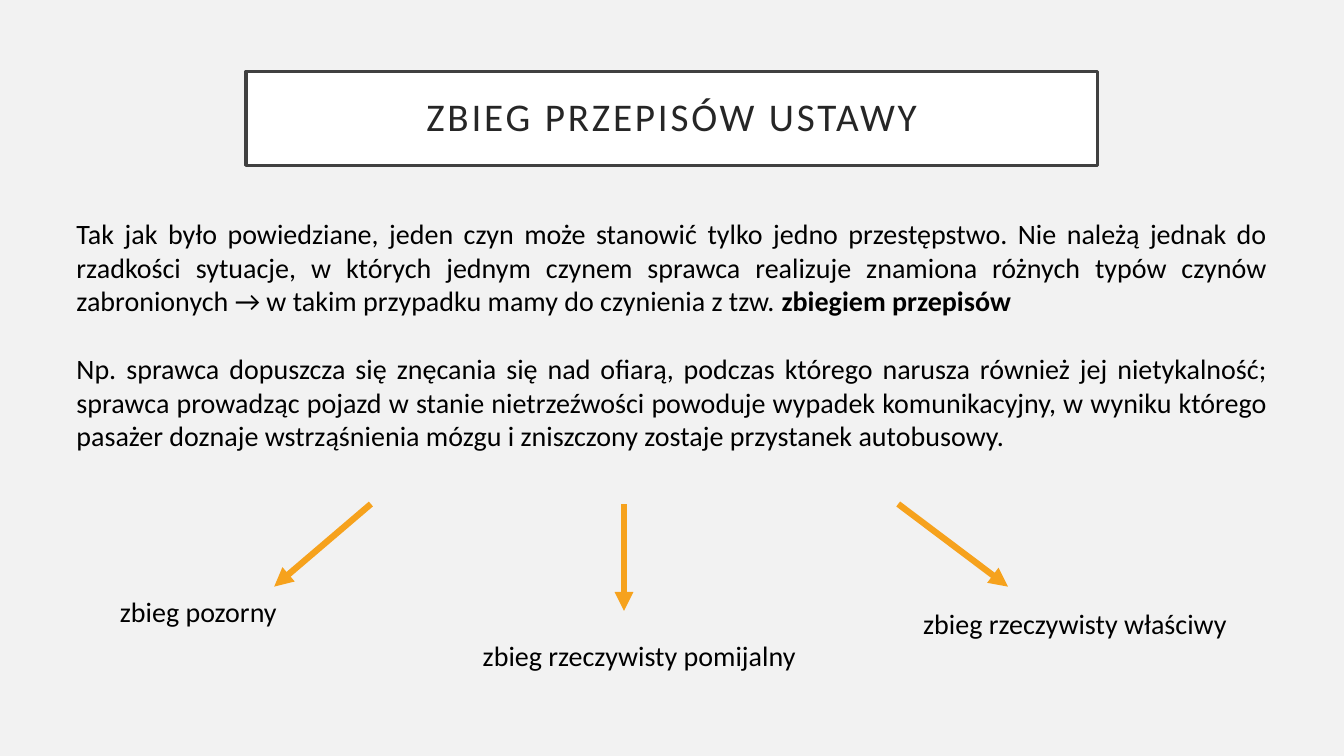
"""Build a slide on concurrent legal provisions and its three kinds."""
import dataclasses

import lxml.etree
import pptx
import pptx.dml.color
import pptx.enum.shapes
import pptx.enum.text
import pptx.oxml.ns
import pptx.util

TITLE = "ZBIEG PRZEPISÓW USTAWY"
BODY = [
    [("Tak jak było powiedziane, jeden czyn może stanowić tylko jedno przestępstwo. "
      "Nie należą jednak do rzadkości sytuacje, w których jednym czynem sprawca realizuje "
      "znamiona różnych typów czynów zabronionych → w takim przypadku mamy do czynienia "
      "z tzw. ", False),
     ("zbiegiem przepisów", True)],
    [("Np. sprawca dopuszcza się znęcania się nad ofiarą, podczas którego narusza również "
      "jej nietykalność; sprawca prowadząc pojazd w stanie nietrzeźwości powoduje wypadek "
      "komunikacyjny, w wyniku którego pasażer doznaje wstrząśnienia mózgu i zniszczony "
      "zostaje przystanek autobusowy.", False)],
]
TITLE_BOX = (18.3, 9.47, 63.38, 12.4)
BODY_BOX = (4.95, 28, 90.08, 32.8)
START, ROW = 66.67, 5.87
KINDS = [
    ("zbieg pozorny", (8.18, 78, 13.43, ROW), 27.6, (20.4, 77.6)),
    ("zbieg rzeczywisty pomijalny", (35.18, 83.87, 24.83, ROW), 46.43, (46.43, 80.8)),
    ("zbieg rzeczywisty właściwy", (67.95, 79.6, 24.3, ROW), 66.83, (75, 77.6)),
]


@dataclasses.dataclass(frozen=True)
class Theme:
    font: str = "Calibri"
    page: str = "F2F2F2"
    panel: str = "FFFFFF"
    frame: str = "404040"
    head: str = "262626"
    ink: str = "000000"
    arrow: str = "F6A21D"
    large: int = 28
    base: int = 20
    gap: float = 24.4


THEME = Theme()
RGB = pptx.dml.color.RGBColor.from_string
Pt = pptx.util.Pt
ALIGN = pptx.enum.text.PP_ALIGN
QN = pptx.oxml.ns.qn

deck = pptx.Presentation()
deck.slide_width = pptx.util.Inches(13.33)
deck.slide_height = pptx.util.Inches(7.5)
slide = deck.slides.add_slide(deck.slide_layouts[6])
slide.background.fill.solid()
slide.background.fill.fore_color.rgb = RGB(THEME.page)


def place(*shares):
    """Turn percentages of the slide into alternating x and y lengths."""
    sides = (deck.slide_width, deck.slide_height) * 2
    return [round(side * share / 100) for side, share in zip(sides, shares)]


def write(par, text, size, color, bold=False):
    """Add one styled run to a paragraph."""
    run = par.add_run()
    run.text = text
    run.font.name, run.font.size, run.font.bold = THEME.font, Pt(size), bold
    run.font.color.rgb = RGB(color)
    return run


def add_text(box, pars, wrap, align):
    """Add a text box with justified or plain paragraphs."""
    frame = slide.shapes.add_textbox(*place(*box)).text_frame
    frame.word_wrap = wrap
    frame.auto_size = pptx.enum.text.MSO_AUTO_SIZE.SHAPE_TO_FIT_TEXT
    for i, runs in enumerate(pars):
        par = frame.add_paragraph() if i else frame.paragraphs[0]
        par.alignment = align
        if i:
            par.space_before = Pt(THEME.gap)
        for text, bold in runs:
            write(par, text, THEME.base, THEME.ink, bold)


def add_title():
    """Add the framed title with spaced letters."""
    panel = slide.shapes.add_shape(
        pptx.enum.shapes.MSO_SHAPE.RECTANGLE, *place(*TITLE_BOX))
    panel.shadow.inherit = False
    panel.fill.solid()
    panel.fill.fore_color.rgb = RGB(THEME.panel)
    panel.line.color.rgb = RGB(THEME.frame)
    panel.line.width = Pt(2.5)
    frame = panel.text_frame
    frame.word_wrap = True
    frame.vertical_anchor = pptx.enum.text.MSO_ANCHOR.MIDDLE
    inset = pptx.util.Inches(0.2)
    frame.margin_left = frame.margin_right = inset
    frame.margin_top = frame.margin_bottom = inset
    par = frame.paragraphs[0]
    par.alignment, par.line_spacing = ALIGN.CENTER, 0.9
    run = write(par, TITLE, THEME.large, THEME.head)
    run.font._element.set("spc", "200")


def add_arrow(start, end):
    """Add a thick arrow between two points."""
    line = slide.shapes.add_connector(
        pptx.enum.shapes.MSO_CONNECTOR.STRAIGHT, *place(*start, *end))
    line.line.color.rgb = RGB(THEME.arrow)
    line.line.width = Pt(4.5)
    props = line._element.spPr
    lxml.etree.SubElement(props.find(QN("a:ln")), QN("a:tailEnd"), type="triangle")
    lxml.etree.SubElement(props, QN("a:effectLst"))


def main():
    """Compose and save the slide."""
    add_title()
    add_text(BODY_BOX, BODY, True, ALIGN.JUSTIFY)
    for name, box, left, tip in KINDS:
        add_arrow((left, START), tip)
        add_text(box, [[(name, False)]], False, ALIGN.LEFT)
    deck.save("out.pptx")


if __name__ == "__main__":
    main()
